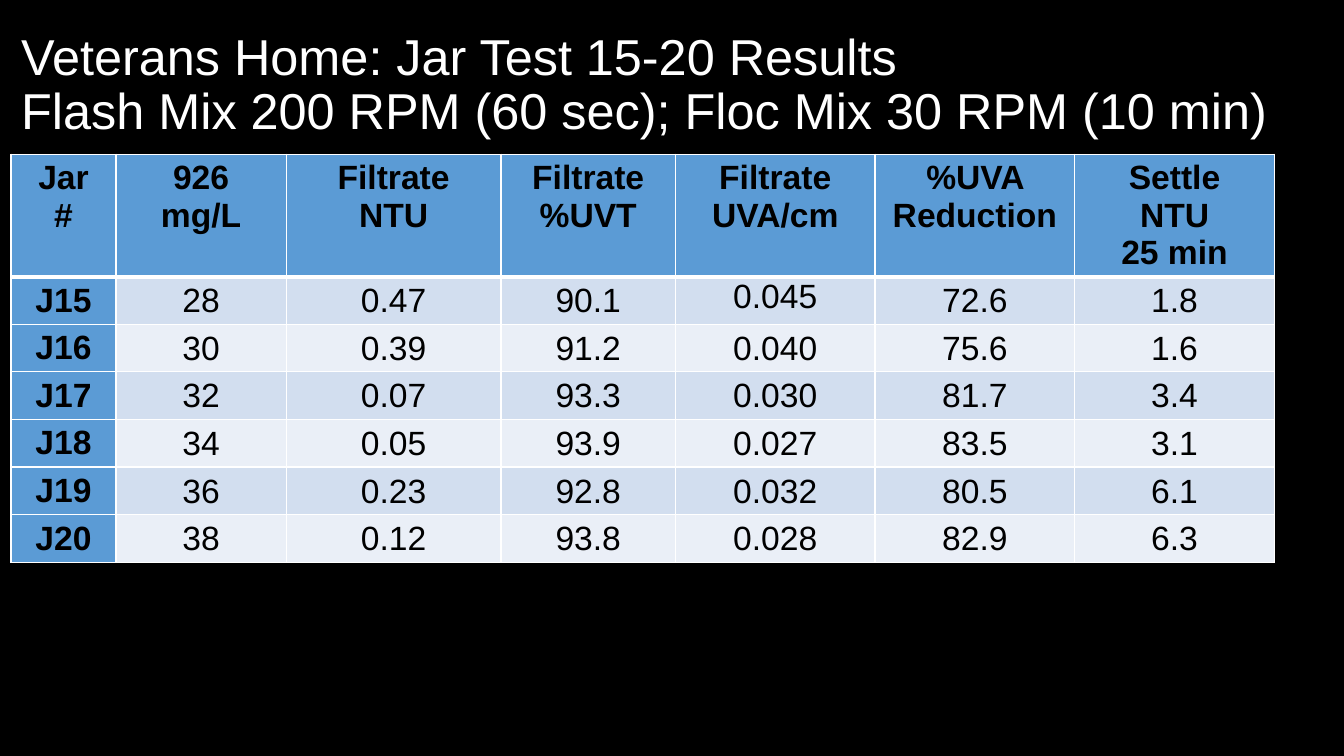
import pptx
import pptx.dml.color
import pptx.enum.text
import pptx.oxml
import pptx.oxml.ns
import pptx.util
from pptx.dml.color import RGBColor
from pptx.util import Inches

BLACK = RGBColor(0x00, 0x00, 0x00)
WHITE = RGBColor(0xFF, 0xFF, 0xFF)
HEADER_BLUE = RGBColor(0x5B, 0x9B, 0xD5)
BANDS = (RGBColor(0xD2, 0xDE, 0xEF), RGBColor(0xEA, 0xEF, 0xF7))
FONT = "Arial"

TITLE_LINES = (
    "Veterans Home: Jar Test 15-20 Results",
    "Flash Mix 200 RPM (60 sec); Floc Mix 30 RPM (10 min)",
)
HEADERS = (
    ("Jar", "#"),
    ("926", "mg/L"),
    ("Filtrate", "NTU"),
    ("Filtrate", "%UVT"),
    ("Filtrate", "UVA/cm"),
    ("%UVA Reduction",),
    ("Settle", "NTU", "25 min"),
)
RESULTS = (
    ("J15", "28", "0.47", "90.1", "0.045", "72.6", "1.8"),
    ("J16", "30", "0.39", "91.2", "0.040", "75.6", "1.6"),
    ("J17", "32", "0.07", "93.3", "0.030", "81.7", "3.4"),
    ("J18", "34", "0.05", "93.9", "0.027", "83.5", "3.1"),
    ("J19", "36", "0.23", "92.8", "0.032", "80.5", "6.1"),
    ("J20", "38", "0.12", "93.8", "0.028", "82.9", "6.3"),
)
COLUMN_WIDTHS = (1.04, 1.69, 2.13, 1.73, 1.98, 1.98, 1.98)
HEADER_HEIGHT = 1.21
ROW_HEIGHT = 0.47


def add_run(p, text, size, color, bold=False):
    r = p.add_run()
    r.text = text
    r.font.name = FONT
    r.font.size = pptx.util.Pt(size)
    r.font.bold = bold
    r.font.color.rgb = color


def add_title(slide, left, top, width, height):
    sp = slide.shapes.title
    sp.left, sp.top, sp.width, sp.height = map(Inches, (left, top, width, height))
    tf = sp.text_frame
    tf.word_wrap = True
    tf.auto_size = pptx.enum.text.MSO_AUTO_SIZE.NONE
    tf.vertical_anchor = pptx.enum.text.MSO_ANCHOR.MIDDLE
    p = tf.paragraphs[0]
    p.alignment = pptx.enum.text.PP_ALIGN.LEFT
    p.line_spacing = 0.9
    for i, line in enumerate(TITLE_LINES):
        if i:
            p.add_line_break()
        add_run(p, line, 36, WHITE)


def set_borders(cell, top=1, bottom=1):
    """Draw white borders; top and bottom are widths in points."""
    tc_pr = cell._tc.get_or_add_tcPr()
    widths = (("lnL", 1), ("lnR", 1), ("lnT", top), ("lnB", bottom))
    for i, (tag, points) in enumerate(widths):
        ln = pptx.oxml.parse_xml(
            f'<a:{tag} {pptx.oxml.ns.nsdecls("a")} w="{pptx.util.Pt(points)}">'
            f'<a:solidFill><a:srgbClr val="{WHITE}"/></a:solidFill></a:{tag}>'
        )
        tc_pr.insert(i, ln)


def fill_cell(cell, lines, fill, bold):
    cell.fill.solid()
    cell.fill.fore_color.rgb = fill
    tf = cell.text_frame
    for i, line in enumerate(lines):
        p = tf.add_paragraph() if i else tf.paragraphs[0]
        p.alignment = pptx.enum.text.PP_ALIGN.CENTER
        add_run(p, line, 24, BLACK, bold)


def add_results_table(slide, left, top):
    height = HEADER_HEIGHT + ROW_HEIGHT * len(RESULTS)
    table = slide.shapes.add_table(
        len(RESULTS) + 1, len(HEADERS), Inches(left), Inches(top),
        Inches(sum(COLUMN_WIDTHS)), Inches(height),
    ).table
    table.first_col = True
    for column, width in zip(table.columns, COLUMN_WIDTHS):
        column.width = Inches(width)
    for i, row in enumerate(table.rows):
        row.height = Inches(ROW_HEIGHT if i else HEADER_HEIGHT)

    for col, lines in enumerate(HEADERS):
        cell = table.cell(0, col)
        fill_cell(cell, lines, HEADER_BLUE, True)
        set_borders(cell, bottom=3)

    for row, values in enumerate(RESULTS, start=1):
        for col, value in enumerate(values):
            cell = table.cell(row, col)
            is_label = col == 0
            fill = HEADER_BLUE if is_label else BANDS[(row - 1) % 2]
            fill_cell(cell, (value,), fill, is_label)
            set_borders(cell, top=3 if row == 1 else 1)
            if not is_label:
                cell.margin_left = cell.margin_right = cell.margin_top = Inches(0.01)
                cell.margin_bottom = 0
                if value != "0.045":
                    cell.vertical_anchor = pptx.enum.text.MSO_ANCHOR.MIDDLE


def main():
    prs = pptx.Presentation()
    prs.slide_width = Inches(13.33)
    prs.slide_height = Inches(7.5)
    slide = prs.slides.add_slide(prs.slide_layouts[5])
    slide.background.fill.solid()
    slide.background.fill.fore_color.rgb = BLACK
    add_title(slide, 0.11, 0.13, 12.8, 1.45)
    add_results_table(slide, 0.11, 1.53)
    prs.save("out.pptx")


if __name__ == "__main__":
    main()
